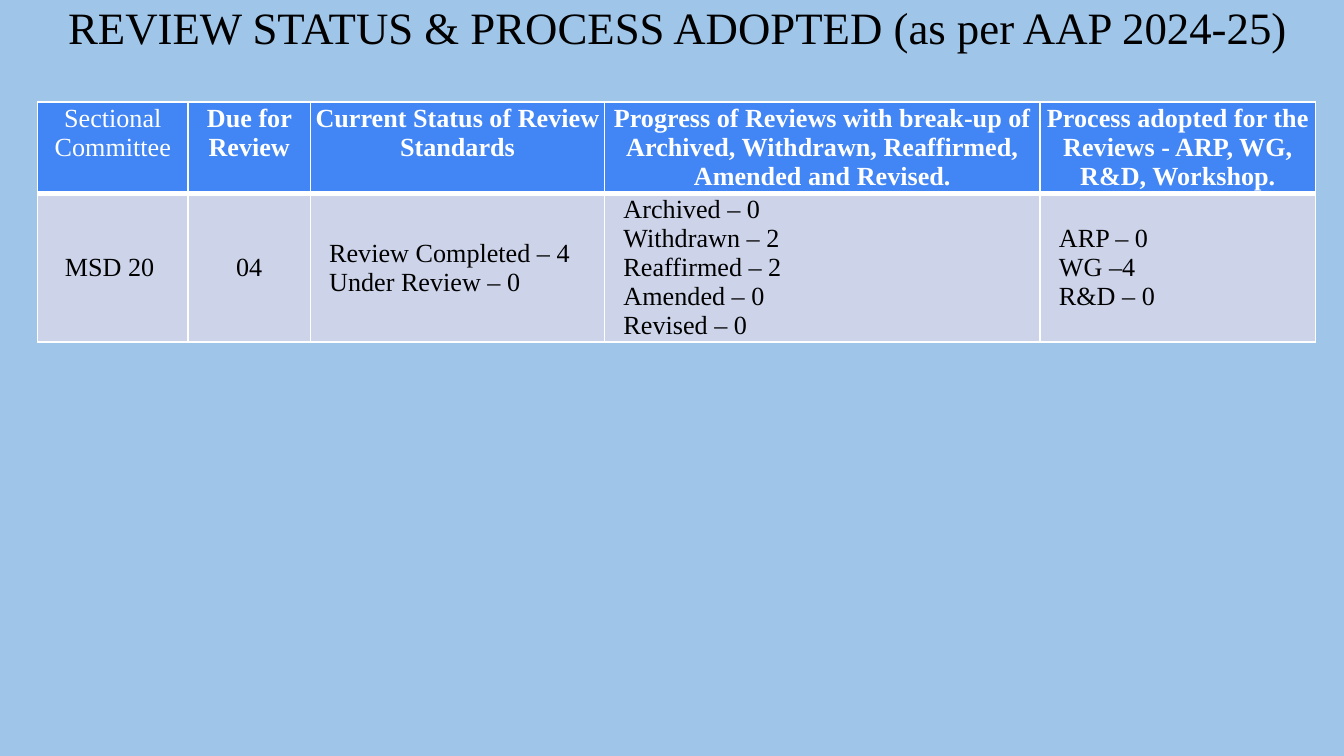
from lxml.etree import SubElement
from pptx import Presentation
from pptx.dml.color import RGBColor
from pptx.enum.text import MSO_ANCHOR, MSO_AUTO_SIZE, PP_ALIGN
from pptx.oxml.ns import qn
from pptx.util import Inches, Pt

COLORS = {
    "background": "9FC5E8",
    "header": "4285F4",
    "body": "CDD4EA",
    "light": "FFFFFF",
    "dark": "000000",
}
FONT = "Times New Roman"
WIDTH = 10
HEIGHT = WIDTH * 9 / 16
TITLE_BOX = (0.28, 0, 9.52, 0.44)
TABLE_BOX = (0.28, 0.76, 9.51, 1.38)
COLUMN_WIDTHS = [1.12, 0.91, 2.19, 3.24, 2.05]
ROW_HEIGHTS = [0.56, 0.82]
THIN, THICK = 1, 3

TITLE = "REVIEW STATUS & PROCESS ADOPTED (as per AAP 2024-25)"
HEADERS = [
    "Sectional Committee",
    "Due for Review",
    "Current Status of Review Standards",
    "Progress of Reviews with break-up of Archived, Withdrawn, Reaffirmed, Amended and Revised.",
    "Process adopted for the Reviews - ARP, WG, R&D, Workshop.",
]
STATUS = [
    ["MSD 20 "],
    ["04"],
    ["Review Completed – 4", "Under Review – 0"],
    ["Archived – 0", "Withdrawn – 2", "Reaffirmed – 2", "Amended – 0", "Revised – 0"],
    ["ARP – 0", "WG –4", "R&D – 0"],
]


def write_text(frame, lines, size=14, color="dark", bold=False, align=PP_ALIGN.CENTER,
               spacing=None, indent=0):
    """Fill a text frame with one formatted paragraph for each line."""
    frame.word_wrap = True
    for index, line in enumerate(lines):
        paragraph = frame.paragraphs[0] if index == 0 else frame.add_paragraph()
        paragraph.alignment = align
        if spacing:
            paragraph.line_spacing = spacing
        if indent:
            properties = paragraph._p.get_or_add_pPr()
            properties.set("marL", str(Inches(indent)))
            properties.set("indent", "0")
        run = paragraph.add_run()
        run.text = line
        run.font.name = FONT
        run.font.size = Pt(size)
        run.font.bold = bold
        run.font.color.rgb = RGBColor.from_string(COLORS[color])


def set_borders(cell, top=THIN, bottom=THIN):
    """Draw white lines on the four sides of a cell."""
    properties = cell._tc.get_or_add_tcPr()
    sides = {"a:lnL": THIN, "a:lnR": THIN, "a:lnT": top, "a:lnB": bottom}
    for index, (tag, width) in enumerate(sides.items()):
        line = properties.makeelement(qn(tag), {"w": str(Pt(width))})
        fill = SubElement(line, qn("a:solidFill"))
        SubElement(fill, qn("a:srgbClr"), val=COLORS["light"])
        properties.insert(index, line)


def style_cell(cell, color, anchor, **borders):
    """Set the fill, margins, anchor and borders of a cell."""
    cell.fill.solid()
    cell.fill.fore_color.rgb = RGBColor.from_string(COLORS[color])
    cell.margin_left = cell.margin_right = Inches(0.02)
    cell.margin_top = cell.margin_bottom = Pt(1.2)
    cell.vertical_anchor = anchor
    set_borders(cell, **borders)


def place_title(slide, box):
    """Move the title placeholder into its box and format it."""
    title = slide.shapes.title
    title.left, title.top, title.width, title.height = map(Inches, box)
    frame = title.text_frame
    frame.auto_size = MSO_AUTO_SIZE.NONE
    frame.vertical_anchor = MSO_ANCHOR.MIDDLE
    frame.margin_left = frame.margin_right = Inches(0.07)
    frame.margin_top = frame.margin_bottom = Inches(0.04)
    write_text(frame, [TITLE], size=24, spacing=0.9)


def place_table(slide, box):
    """Add the review table, sharing its box among columns and rows."""
    left, top, width, height = box
    table = slide.shapes.add_table(
        len(ROW_HEIGHTS), len(COLUMN_WIDTHS), *map(Inches, box)
    ).table
    for column, share in zip(table.columns, COLUMN_WIDTHS):
        column.width = Inches(width * share / sum(COLUMN_WIDTHS))
    for row, share in zip(table.rows, ROW_HEIGHTS):
        row.height = Inches(height * share / sum(ROW_HEIGHTS))
    for index, (header, lines) in enumerate(zip(HEADERS, STATUS)):
        cell = table.cell(0, index)
        style_cell(cell, "header", MSO_ANCHOR.TOP, bottom=THICK)
        write_text(cell.text_frame, [header], color="light", bold=index > 0)

        cell = table.cell(1, index)
        anchor = MSO_ANCHOR.BOTTOM if len(lines) > 3 else MSO_ANCHOR.MIDDLE
        style_cell(cell, "body", anchor, top=THICK)
        listed = len(lines) > 1
        write_text(
            cell.text_frame, lines,
            align=PP_ALIGN.LEFT if listed else PP_ALIGN.CENTER,
            indent=0.12 if listed else 0,
        )


def build_review_slide(presentation):
    """Add the review status slide with its title and table."""
    slide = presentation.slides.add_slide(presentation.slide_layouts[5])
    slide.background.fill.solid()
    slide.background.fill.fore_color.rgb = RGBColor.from_string(COLORS["background"])
    place_title(slide, TITLE_BOX)
    place_table(slide, TABLE_BOX)


def main():
    """Build and save the presentation."""
    presentation = Presentation()
    presentation.slide_width = Inches(WIDTH)
    presentation.slide_height = Inches(HEIGHT)
    build_review_slide(presentation)
    presentation.save("out.pptx")


if __name__ == "__main__":
    main()
